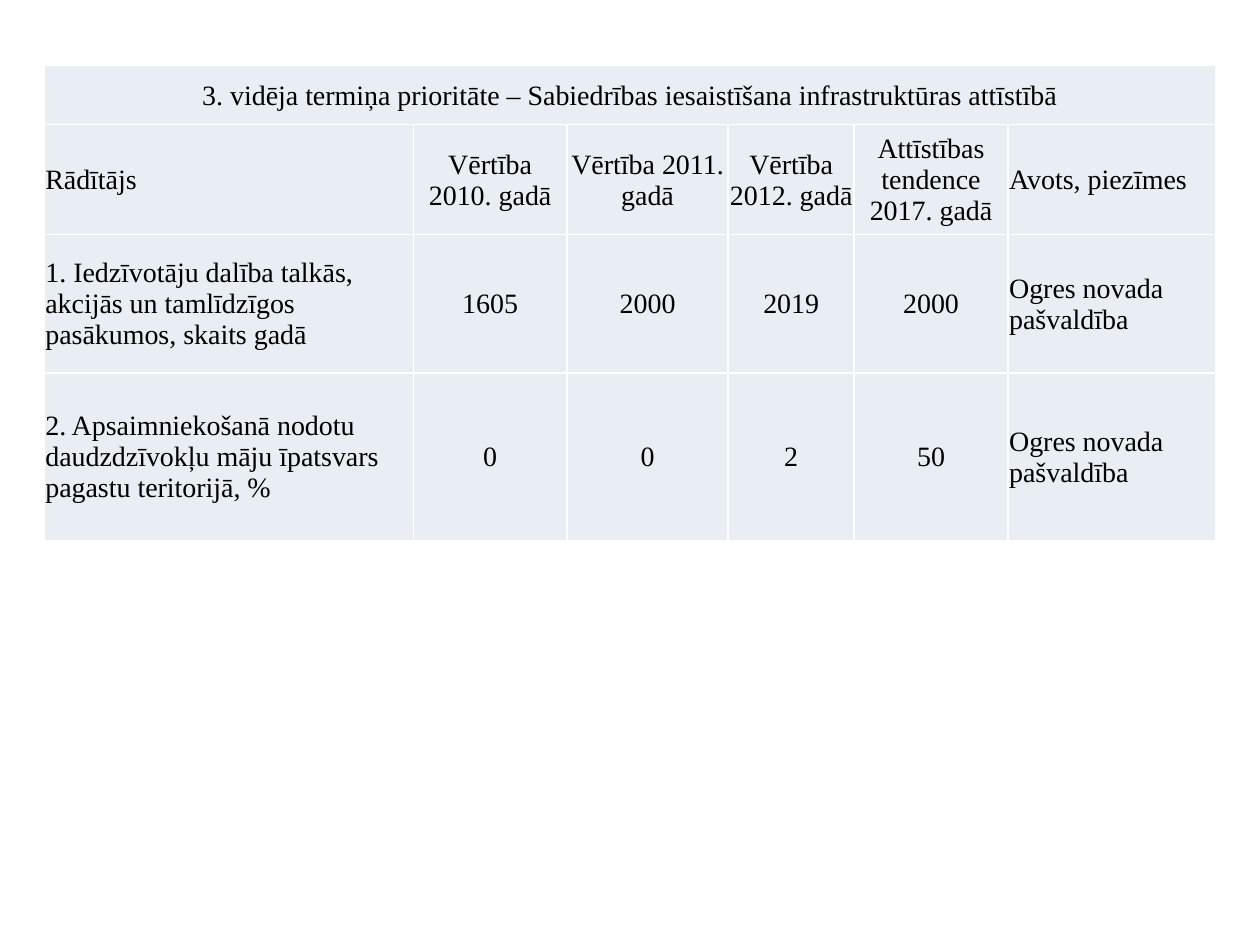
from lxml import etree
from pptx import Presentation
from pptx.dml.color import RGBColor
from pptx.enum.text import MSO_ANCHOR, PP_ALIGN
from pptx.oxml.ns import qn
from pptx.util import Inches, Pt

LEFT, CENTER = PP_ALIGN.LEFT, PP_ALIGN.CENTER
MIDDLE = MSO_ANCHOR.MIDDLE

TITLE = "3. vidēja termiņa prioritāte – Sabiedrības iesaistīšana infrastruktūras attīstībā"
SOURCE = "Ogres novada pašvaldība"
ROWS = [
    [TITLE, "", "", "", "", ""],
    ["Rādītājs", "Vērtība 2010. gadā", "Vērtība 2011. gadā", "Vērtība 2012. gadā",
     "Attīstības tendence 2017. gadā", "Avots, piezīmes"],
    ["1. Iedzīvotāju dalība talkās, akcijās un tamlīdzīgos pasākumos, skaits gadā",
     "1605", "2000", "2019", "2000", SOURCE],
    ["2. Apsaimniekošanā nodotu daudzdzīvokļu māju īpatsvars pagastu teritorijā, %",
     "0", "0", "2", "50", SOURCE],
]
COL_WIDTHS = [2.93, 1.22, 1.28, 1, 1.22, 1.65]
ROW_HEIGHTS = [0.47, 0.87, 1.1, 1.33]


def color(value):
    return RGBColor.from_string(value)


def write(tf, text, size=16, font="Times New Roman", fill="000000", align=LEFT):
    p = tf.paragraphs[0]
    p.alignment = align
    r = p.add_run()
    r.text = text
    r.font.size = Pt(size)
    r.font.name = font
    r.font.bold = False
    r.font.color.rgb = color(fill)


class Deck:
    """Holds the table style and the current slide."""

    cell_fill = "E9EDF4"
    border = "FFFFFF"
    border_width = Pt(1)
    inset = Inches(0.01)

    def __init__(self, prs):
        self.s = prs.slides.add_slide(prs.slide_layouts[6])

    def borders(self, cell):
        tc_pr = cell._tc.get_or_add_tcPr()
        for side in ("lnL", "lnR", "lnT", "lnB"):
            ln = etree.SubElement(tc_pr, qn(f"a:{side}"), w=str(self.border_width))
            solid = etree.SubElement(ln, qn("a:solidFill"))
            etree.SubElement(solid, qn("a:srgbClr"), val=self.border)

    def cell(self, cell, text, align):
        self.borders(cell)
        cell.fill.solid()
        cell.fill.fore_color.rgb = color(self.cell_fill)
        cell.vertical_anchor = MIDDLE
        cell.margin_left = cell.margin_right = cell.margin_top = self.inset
        cell.margin_bottom = 0
        if text:
            write(cell.text_frame, text, align=align)

    def table(self, rows, left, top, widths, heights):
        table = self.s.shapes.add_table(
            len(rows), len(widths), Inches(left), Inches(top),
            Inches(sum(widths)), Inches(sum(heights))).table
        table.first_row = table.horz_banding = False
        for column, width in zip(table.columns, widths):
            column.width = Inches(width)
        for row, height in zip(table.rows, heights):
            row.height = Inches(height)
        last = len(widths) - 1
        for i, row in enumerate(rows):
            for j, text in enumerate(row):
                align = CENTER if i == 0 or 0 < j < last else LEFT
                self.cell(table.cell(i, j), text, align)
        table.cell(0, 0).merge(table.cell(0, last))


def main():
    prs = Presentation()
    prs.slide_width, prs.slide_height = Inches(10), Inches(7.5)
    Deck(prs).table(ROWS, 0.35, 0.52, COL_WIDTHS, ROW_HEIGHTS)
    prs.save("out.pptx")


if __name__ == "__main__":
    main()
